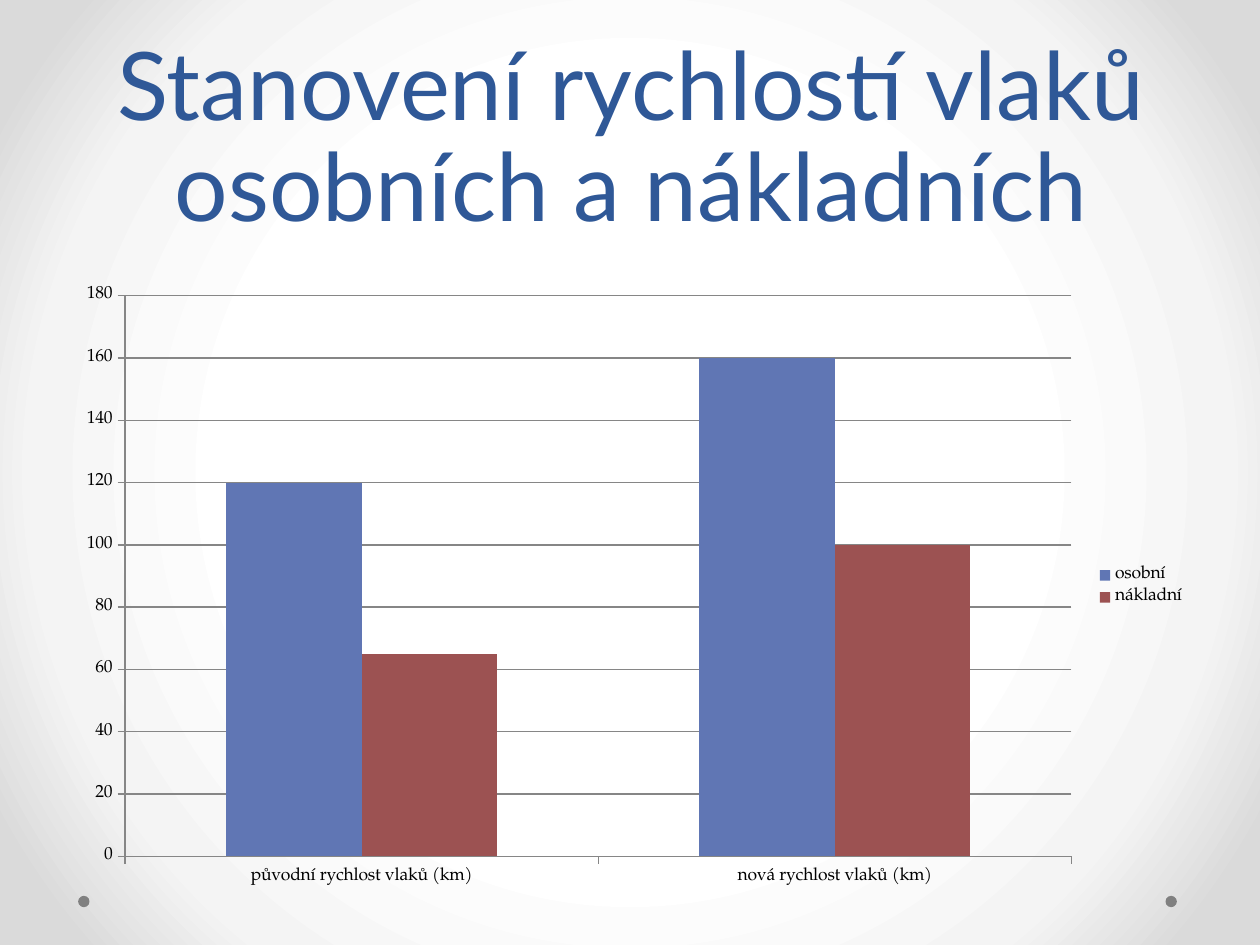
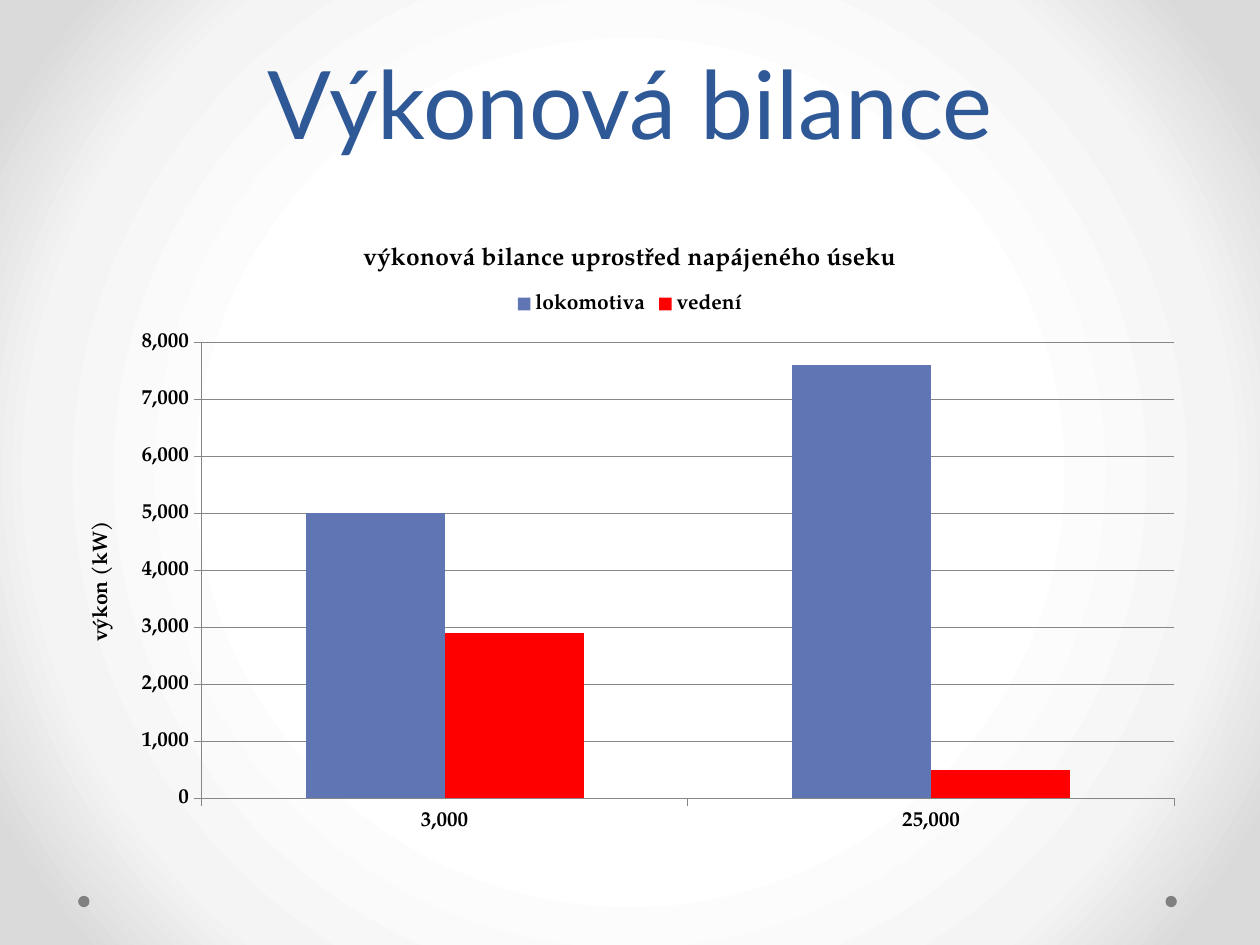
from dataclasses import dataclass

from pptx import Presentation
from pptx.chart.data import CategoryChartData
from pptx.dml.color import RGBColor as RGB
from pptx.enum.chart import XL_CHART_TYPE as ChartType, XL_LEGEND_POSITION as LegendPosition
from pptx.enum.chart import XL_TICK_MARK as TickMark
from pptx.enum.shapes import MSO_SHAPE as Shape
from pptx.enum.text import MSO_ANCHOR as Anchor, PP_ALIGN as Align
from pptx.oxml import parse_xml
from pptx.util import Inches, Pt


@dataclass(frozen=True)
class Theme:
    title_color: str = "2F5897"
    text_color: str = "000000"
    grid_color: str = "868686"
    dot_color: str = "808080"
    blue: str = "6076B4"
    brown: str = "9C5252"
    red: str = "FF0000"
    background: tuple = ((50, "FFFFFF"), (76, "F4F4F4"), (92, "DADADA"))
    title_font: str = "Lato"
    chart_font: str = "TeX Gyre Pagella"
    title_size: int = 54
    title_spacing: int = 58
    chart_title_size: int = 14
    strong_size: int = 12
    chart_size: int = 10


THEME = Theme()
NUMBER_FORMAT = "#,##0"


def style_font(font, size, name=THEME.chart_font, color=THEME.text_color, bold=False):
    font.name = name
    font.size = Pt(size)
    font.bold = bold
    font.color.rgb = RGB.from_string(color)


def write_text(frame, text, align=Align.CENTER, spacing=None, **font_format):
    paragraph = frame.paragraphs[0]
    paragraph.alignment = align
    if spacing:
        paragraph.line_spacing = Pt(spacing)
    run = paragraph.add_run()
    run.text = text
    style_font(run.font, **font_format)


def set_background(master):
    """Radial gradient shared by all slides."""
    master.background.fill.solid()
    solid_fill = master.element.xpath("p:cSld/p:bg/p:bgPr/a:solidFill")[0]
    stops = "".join(
        f'<a:gs pos="{position * 1000}"><a:srgbClr val="{color}"/></a:gs>'
        for position, color in THEME.background
    )
    gradient = parse_xml(
        '<a:gradFill xmlns:a="http://schemas.openxmlformats.org/drawingml/2006/main" '
        f'rotWithShape="1"><a:gsLst>{stops}</a:gsLst><a:path path="circle">'
        '<a:fillToRect l="50000" t="50000" r="50000" b="50000"/></a:path></a:gradFill>'
    )
    solid_fill.getparent().replace(solid_fill, gradient)


def add_footer_dots(slide):
    for left in (9.25, 0.62):
        dot = slide.shapes.add_shape(
            Shape.OVAL, Inches(left), Inches(7.11), Inches(0.09), Inches(0.09))
        dot.shadow.inherit = False
        dot.fill.solid()
        dot.fill.fore_color.rgb = RGB.from_string(THEME.dot_color)
        dot.line.fill.background()


def add_title(slide, box, text):
    frame = slide.shapes.add_textbox(*map(Inches, box)).text_frame
    frame.word_wrap = True
    frame.vertical_anchor = Anchor.BOTTOM
    write_text(frame, text, spacing=THEME.title_spacing, size=THEME.title_size,
               name=THEME.title_font, color=THEME.title_color)


def style_axis(axis, size, bold):
    axis.major_tick_mark = TickMark.OUTSIDE
    axis.minor_tick_mark = TickMark.NONE
    axis.format.line.color.rgb = RGB.from_string(THEME.grid_color)
    style_font(axis.tick_labels.font, size, bold=bold)


def add_column_chart(slide, box, categories, series, legend_position,
                     size=THEME.chart_size, bold=False):
    """Clustered columns; series holds (name, values, color)."""
    data = CategoryChartData()
    data.categories = categories
    if not isinstance(categories[0], str):
        data.categories.number_format = NUMBER_FORMAT
    for name, values, _ in series:
        data.add_series(name, values)
    chart = slide.shapes.add_chart(
        ChartType.COLUMN_CLUSTERED, *map(Inches, box), data).chart
    chart.has_title = False
    style_font(chart.font, THEME.chart_size)

    # Columns
    plot = chart.plots[0]
    plot.gap_width = 150
    plot.overlap = 0
    plot.vary_by_categories = False
    for column, (_, _, color) in zip(plot.series, series):
        column.format.fill.solid()
        column.format.fill.fore_color.rgb = RGB.from_string(color)

    # Axes and gridlines
    for axis in (chart.category_axis, chart.value_axis):
        style_axis(axis, size, bold)
    chart.value_axis.has_major_gridlines = True
    grid_line = chart.value_axis.major_gridlines.format.line
    grid_line.color.rgb = RGB.from_string(THEME.grid_color)

    # Legend
    chart.has_legend = True
    chart.legend.position = legend_position
    chart.legend.include_in_layout = False
    style_font(chart.legend.font, size, bold=bold)
    return chart


def build_speed_slide(slide):
    add_footer_dots(slide)
    add_title(slide, (0.51, 0.21, 9, 1.75),
              "Stanovení rychlostí vlaků osobních a nákladních")
    add_column_chart(
        slide, (0.51, 2.18, 9, 4.95),
        ["původní rychlost vlaků (km)", "nová rychlost vlaků (km)"],
        [("osobní", (120, 160), THEME.blue), ("nákladní", (65, 100), THEME.brown)],
        LegendPosition.RIGHT)


def build_power_slide(slide):
    add_footer_dots(slide)
    add_title(slide, (0.5, 0, 9, 1.31), "Výkonová bilance")
    chart = add_column_chart(
        slide, (0.5, 1.75, 9, 4.95), [3000, 25000],
        [("lokomotiva", (5000, 7600), THEME.blue), ("vedení", (2900, 500), THEME.red)],
        LegendPosition.TOP, size=THEME.strong_size, bold=True)

    # Chart title and power axis
    write_text(chart.chart_title.text_frame, "výkonová bilance uprostřed napájeného úseku",
               size=THEME.chart_title_size, bold=True)
    power_axis = chart.value_axis
    power_axis.minimum_scale, power_axis.maximum_scale = 0, 8000
    power_axis.major_unit = 1000
    write_text(power_axis.axis_title.text_frame, "výkon (kW)",
               size=THEME.strong_size, bold=True)
    title_body = chart.element.xpath("//c:valAx/c:title//a:bodyPr")[0]
    title_body.set("rot", "-5400000")
    title_body.set("vert", "horz")
    for axis in (chart.category_axis, power_axis):
        axis.tick_labels.number_format = NUMBER_FORMAT
        axis.tick_labels.number_format_is_linked = False


def main():
    presentation = Presentation()
    presentation.slide_width, presentation.slide_height = Inches(10), Inches(7.5)
    set_background(presentation.slide_master)
    for build_slide in (build_speed_slide, build_power_slide):
        build_slide(presentation.slides.add_slide(presentation.slide_layouts[6]))
    presentation.save("out.pptx")


if __name__ == "__main__":
    main()
